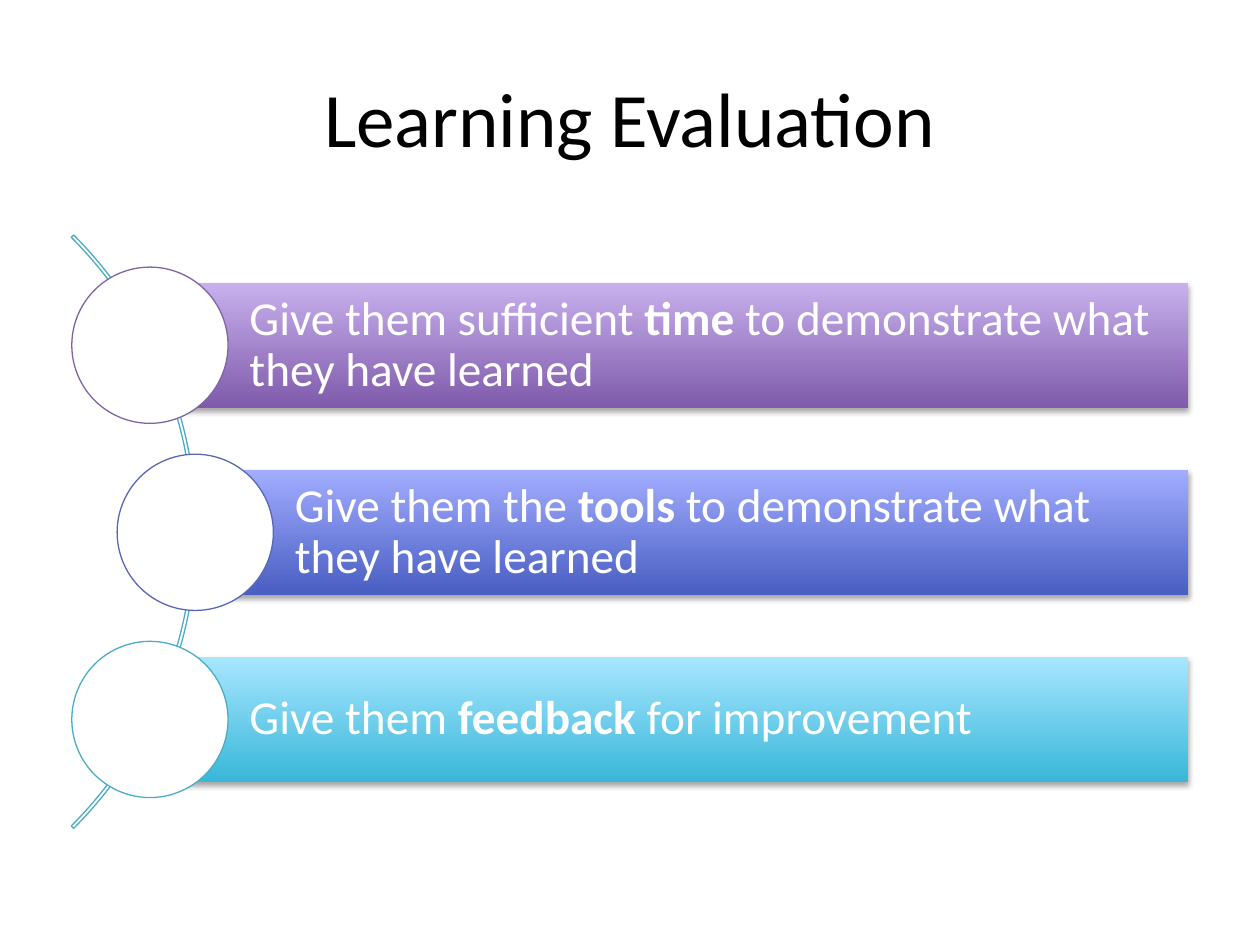
import pptx
import pptx.dml.color
import pptx.enum.shapes
import pptx.enum.text
import pptx.oxml
import pptx.oxml.ns
import pptx.util

SHAPES = pptx.enum.shapes.MSO_SHAPE
ALIGN = pptx.enum.text.PP_ALIGN
ANCHOR = pptx.enum.text.MSO_ANCHOR


def color(value):
    return pptx.dml.color.RGBColor.from_string(value)


class EvaluationSlide:
    """Draws a curved list on a slide with a grid of 100 columns and 75 rows."""

    font = "Calibri"
    title_size = 44
    body_size = 27
    columns, rows = 100, 75

    def __init__(self, presentation):
        self.column = presentation.slide_width / self.columns
        self.row = presentation.slide_height / self.rows
        self.slide = presentation.slides.add_slide(presentation.slide_layouts[5])

    def box(self, left, top, width, height):
        return (round(left * self.column), round(top * self.row),
                round(width * self.column), round(height * self.row))

    def format_run(self, run, size, value, bold=False):
        run.font.name = self.font
        run.font.size = pptx.util.Pt(size)
        run.font.bold = bold
        run.font.color.rgb = color(value)

    def title(self, text, *place):
        shape = self.slide.shapes.title
        shape.left, shape.top, shape.width, shape.height = self.box(*place)
        shape.text_frame.text = text
        shape.text_frame.vertical_anchor = ANCHOR.MIDDLE
        paragraph = shape.text_frame.paragraphs[0]
        paragraph.alignment = ALIGN.CENTER
        self.format_run(paragraph.runs[0], self.title_size, "000000")

    def shape(self, kind, *place):
        shape = self.slide.shapes.add_shape(kind, *self.box(*place))
        shape.shadow.inherit = False
        return shape

    def outline(self, shape, value):
        shape.line.color.rgb = color(value)
        shape.line.width = pptx.util.Pt(0.75)

    def arc(self, value, *place):
        arc = self.shape(SHAPES.BLOCK_ARC, *place)
        for index, adjustment in enumerate((189, 27, 0.004)):
            arc.adjustments[index] = adjustment
        arc.fill.background()
        self.outline(arc, value)

    def circle(self, value, left, top, diameter):
        circle = self.shape(SHAPES.OVAL, left, top, diameter, diameter)
        circle.fill.solid()
        circle.fill.fore_color.rgb = color("FFFFFF")
        self.outline(circle, value)

    def add_shadow(self, shape):
        effects = shape._element.spPr.find(pptx.oxml.ns.qn("a:effectLst"))
        effects.append(pptx.oxml.parse_xml(
            f'<a:outerShdw {pptx.oxml.ns.nsdecls("a")} blurRad="{pptx.util.Pt(3.1)}" '
            f'dist="{pptx.util.Pt(1.8)}" dir="5400000" rotWithShape="0">'
            '<a:srgbClr val="000000"><a:alpha val="35000"/></a:srgbClr></a:outerShdw>'))

    def bar(self, parts, bottom_color, top_color, *place):
        bar = self.shape(SHAPES.RECTANGLE, *place)
        bar.line.fill.background()
        bar.fill.gradient()
        bar.fill.gradient_angle = 90
        for stop, value in zip(bar.fill.gradient_stops, (bottom_color, top_color)):
            stop.color.rgb = color(value)
        self.add_shadow(bar)
        frame = bar.text_frame
        frame.word_wrap = True
        frame.vertical_anchor = ANCHOR.MIDDLE
        frame.margin_left = pptx.util.Inches(0.79)
        frame.margin_top = frame.margin_right = frame.margin_bottom = pptx.util.Inches(0.07)
        paragraph = frame.paragraphs[0]
        paragraph.alignment = ALIGN.LEFT
        paragraph.line_spacing = 0.9
        for index, text in enumerate(parts):
            run = paragraph.add_run()
            run.text = text
            self.format_run(run, self.body_size, "FFFFFF", bold=index == 1)


def main():
    presentation = pptx.Presentation()
    presentation.slide_width = pptx.util.Inches(10)
    presentation.slide_height = pptx.util.Inches(7.5)
    page = EvaluationSlide(presentation)
    page.title("Learning Evaluation", 5, 3, 90, 12.5)
    page.arc("4BACC6", -51, 8.9, 66.6, 66.6)

    items = (
        (("Give them sufficient ", "time", " to demonstrate what they have learned"),
         "7F5BAB", "C8B0ED", "8064A2", 11.9),
        (("Give them the ", "tools", " to demonstrate what they have learned"),
         "495EC2", "A2ADFF", "5767B4", 15.5),
        (("Give them ", "feedback", " for improvement"),
         "39B7D8", "A7E6FF", "4BACC6", 11.9),
    )
    first_center, pitch = 27.4, 14.85
    bar_height, bar_right, diameter = 9.9, 94.3, 12.4
    for index, (parts, bottom_color, top_color, line_color, left) in enumerate(items):
        center = first_center + index * pitch
        page.bar(parts, bottom_color, top_color,
                 left, center - bar_height / 2, bar_right - left, bar_height)
        page.circle(line_color, left - diameter / 2, center - diameter / 2, diameter)

    presentation.save("out.pptx")


if __name__ == "__main__":
    main()
